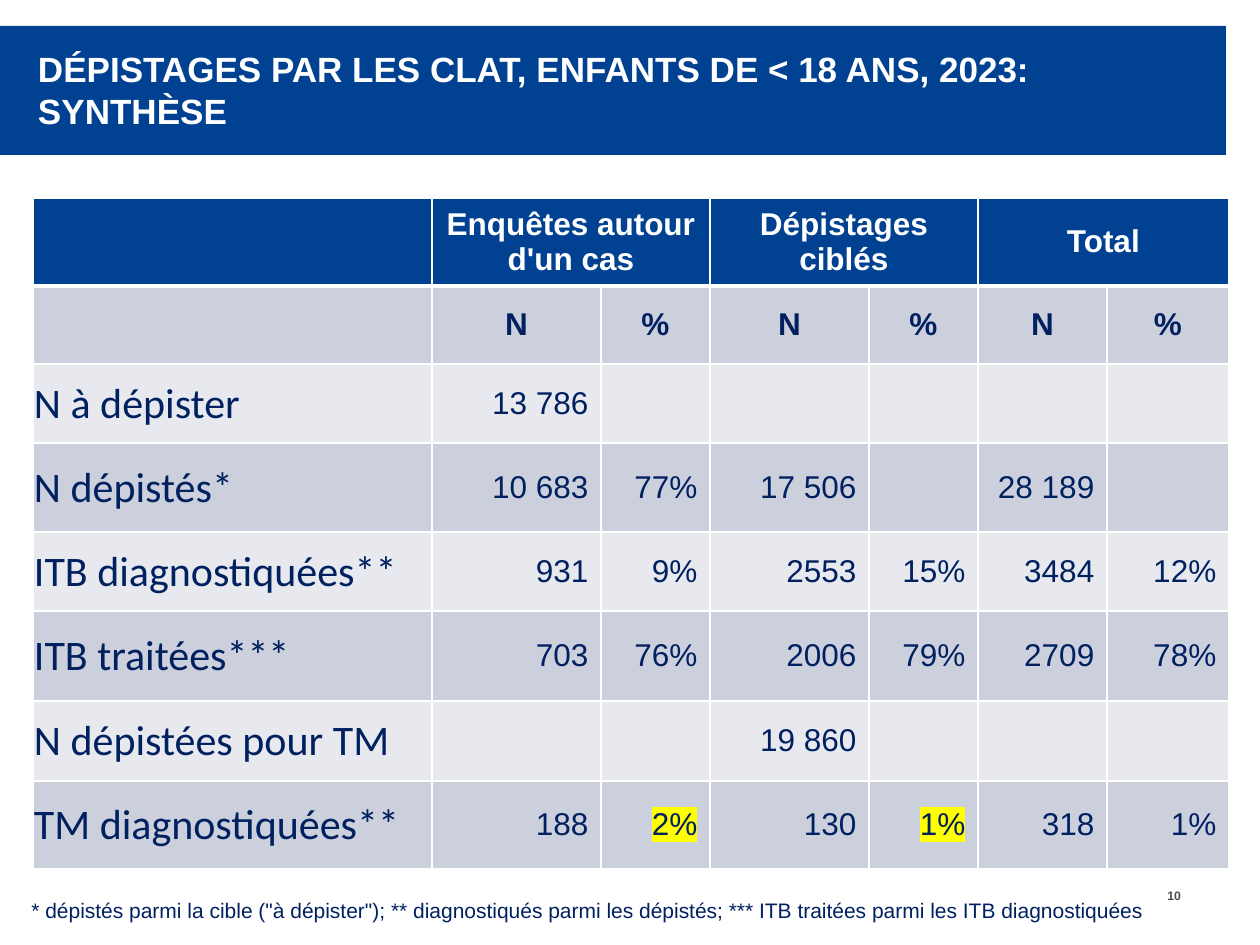
import pptx
import pptx.dml.color
import pptx.enum.shapes
import pptx.enum.text
import pptx.oxml
import pptx.oxml.ns
import pptx.util

PX = pptx.util.Inches(1) / 126
ALIGN = pptx.enum.text.PP_ALIGN
MIDDLE = pptx.enum.text.MSO_ANCHOR.MIDDLE
THEME = {
    "blue": "004192", "navy": "002060", "white": "FFFFFF", "grey": "4D4D4F",
    "dark_row": "CCCFDC", "light_row": "E7E9EE", "highlight": "FFFF00",
    "sans": "Arial", "label_font": "Calibri",
    "title": 20, "label": 24, "cell": 18, "note": 12, "number": 7,
}
NS = pptx.oxml.ns.nsdecls("a")


def px(*lengths):
    return [round(length * PX) for length in lengths]


def write(frame, text, size, color, bold=False, font="sans", align=ALIGN.LEFT):
    paragraph = frame.paragraphs[0]
    paragraph.alignment = align
    run = paragraph.add_run()
    run.text = text
    formats = {"size": pptx.util.Pt(THEME[size]), "name": THEME[font], "bold": bold}
    for key, value in formats.items():
        setattr(run.font, key, value)
    run.font.color.rgb = pptx.dml.color.RGBColor.from_string(THEME[color])
    return run


deck = pptx.Presentation()
deck.slide_width, deck.slide_height = px(1260, 945)
slide = deck.slides.add_slide(deck.slide_layouts[5])

band = slide.shapes.add_shape(pptx.enum.shapes.MSO_SHAPE.RECTANGLE, *px(0, 26, 1226, 129))
band.shadow.inherit = False
band.fill.solid()
band.fill.fore_color.rgb = pptx.dml.color.RGBColor.from_string(THEME["blue"])
band.line.fill.background()
slide.shapes._spTree.insert(2, band._element)

heading = slide.shapes.title
heading.left, heading.top, heading.width, heading.height = px(33, 46, 1134, 87)
heading_format = {
    "margin_left": px(5)[0], "margin_right": px(5)[0], "margin_top": 0, "margin_bottom": 0,
    "vertical_anchor": MIDDLE, "word_wrap": True,
    "auto_size": pptx.enum.text.MSO_AUTO_SIZE.NONE,
}
for key, value in heading_format.items():
    setattr(heading.text_frame, key, value)
write(heading.text_frame, "DÉPISTAGES PAR LES CLAT, ENFANTS DE < 18 ANS, 2023: SYNTHÈSE",
      "title", "white", bold=True)

screenings = [
    ["", "Enquêtes autour d'un cas", "", "Dépistages ciblés", "", "Total", ""],
    ["", "N", "%", "N", "%", "N", "%"],
    ["N à dépister", "13 786", "", "", "", "", ""],
    ["N dépistés*", "10 683", "77%", "17 506", "", "28 189", ""],
    ["ITB diagnostiquées**", "931", "9%", "2553", "15%", "3484", "12%"],
    ["ITB traitées***", "703", "76%", "2006", "79%", "2709", "78%"],
    ["N dépistées pour TM", "", "", "19 860", "", "", ""],
    ["TM diagnostiquées**", "188", "2%", "130", "1%", "318", "1%"],
]
highlighted = {(7, 2), (7, 4)}
column_widths = [399, 169, 109, 159, 109, 129, 122]
row_heights = [88, 78, 79, 89, 79, 90, 80, 88]

synthesis = slide.shapes.add_table(
    len(row_heights), len(column_widths),
    *px(33, 198, sum(column_widths), sum(row_heights))).table
for column, width in zip(synthesis.columns, px(*column_widths)):
    column.width = width
for row, height in zip(synthesis.rows, px(*row_heights)):
    row.height = height
for first in (1, 3, 5):
    synthesis.cell(0, first).merge(synthesis.cell(0, first + 1))

for r, values in enumerate(screenings):
    for c, value in enumerate(values):
        cell = synthesis.cell(r, c)
        cell.vertical_anchor = MIDDLE
        properties = cell._tc.get_or_add_tcPr()
        for side in "LRTB":
            weight = 3 if (r, side) in {(0, "B"), (1, "T")} else 1
            properties.append(pptx.oxml.parse_xml(
                f'<a:ln{side} {NS} w="{pptx.util.Pt(weight)}"><a:solidFill>'
                f'<a:srgbClr val="{THEME["white"]}"/></a:solidFill></a:ln{side}>'))
        fill = "blue" if r == 0 else "dark_row" if r % 2 else "light_row"
        cell.fill.solid()
        cell.fill.fore_color.rgb = pptx.dml.color.RGBColor.from_string(THEME[fill])
        if not value:
            continue
        if c == 0:
            label_margins = {"margin_left": 1, "margin_right": 1, "margin_top": 1, "margin_bottom": 0}
            for key, margin in label_margins.items():
                setattr(cell, key, px(margin)[0])
            write(cell.text_frame, value, "label", "navy", font="label_font")
            continue
        figure = write(cell.text_frame, value, "cell", "navy" if r else "white",
                       bold=r < 2, align=ALIGN.CENTER if r < 2 else ALIGN.RIGHT)
        if (r, c) in highlighted:
            color_fill = figure._r.rPr.find(pptx.oxml.ns.qn("a:solidFill"))
            color_fill.addnext(pptx.oxml.parse_xml(
                f'<a:highlight {NS}><a:srgbClr val="{THEME["highlight"]}"/></a:highlight>'))

footnote = slide.shapes.add_textbox(*px(19, 891, 1147, 38)).text_frame
footnote.word_wrap = False
write(footnote, '* dépistés parmi la cible ("à dépister"); ** diagnostiqués parmi les dépistés; '
      "*** ITB traitées parmi les ITB diagnostiquées", "note", "navy")

page_number = slide.shapes.add_textbox(*px(1152, 888, 34, 16)).text_frame
number_format = {
    "margin_left": px(5)[0], "margin_right": px(5)[0], "margin_top": 0, "margin_bottom": 0,
    "word_wrap": False,
}
for key, value in number_format.items():
    setattr(page_number, key, value)
write(page_number, "10", "number", "grey", bold=True, align=ALIGN.RIGHT)

deck.save("out.pptx")
